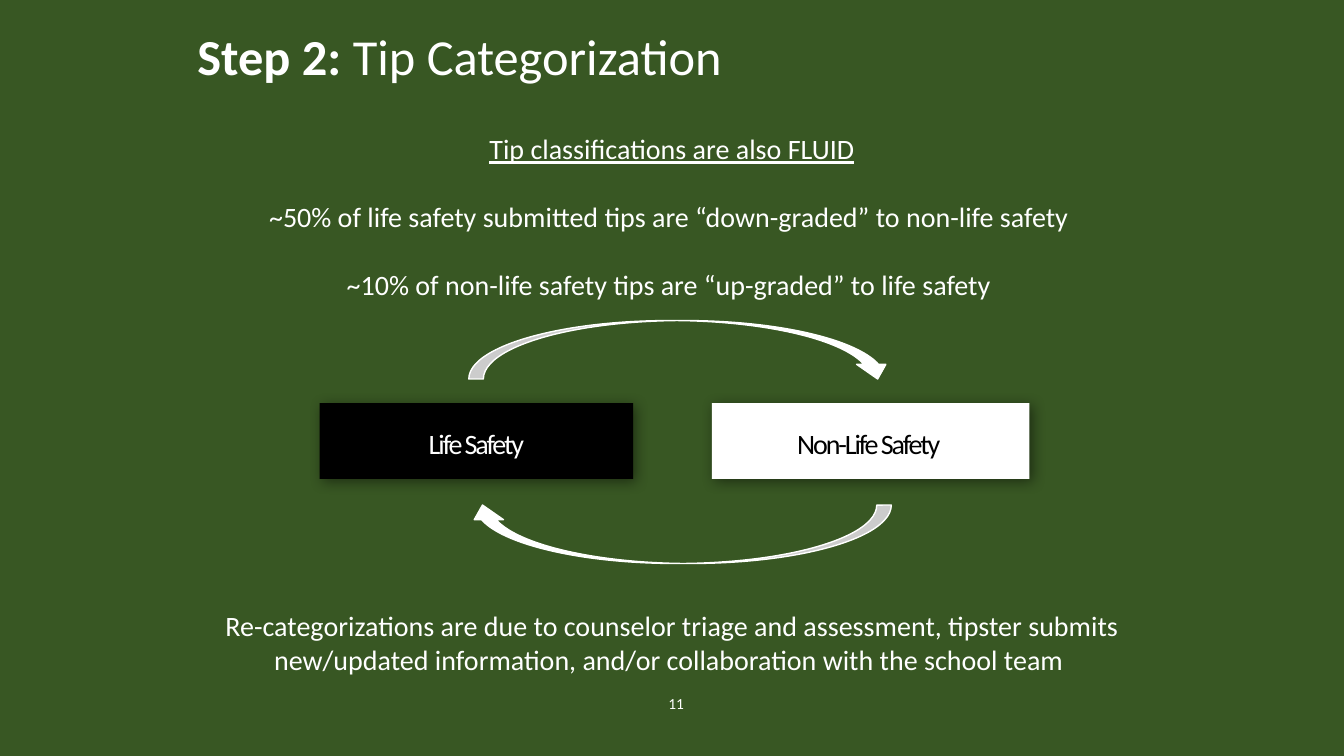
from lxml import etree
from pptx import Presentation
from pptx.dml.color import RGBColor
from pptx.enum.shapes import MSO_SHAPE as Shape
from pptx.enum.text import MSO_ANCHOR as Anchor, MSO_AUTO_SIZE as AutoSize, PP_ALIGN as Align
from pptx.oxml.ns import qn
from pptx.util import Emu, Pt

PX = 9144  # EMU per px, 100 px to the inch
FONT = "Calibri"
BODY_SIZE = 20
LINE = 24.4  # height of one body line in points
COLORS = {"green": "385723", "white": "FFFFFF", "black": "000000"}


def color(name):
    return RGBColor.from_string(COLORS[name])


def px(*lengths):
    return [Emu(length * PX) for length in lengths]


def add_box(page, place, anchor=Anchor.TOP, wrap=True):
    frame = page.shapes.add_textbox(*px(*place)).text_frame
    frame.word_wrap = wrap
    frame.auto_size = AutoSize.NONE
    frame.vertical_anchor = anchor
    return frame


def add_run(para, text, size=BODY_SIZE, ink="white", bold=False, underline=False, spacing=None):
    span = para.add_run()
    span.text = text
    font = span.font
    font.name, font.size = FONT, Pt(size)
    font.bold, font.underline = bold, underline
    font.color.rgb = color(ink)
    if spacing is not None:
        font._element.set("spc", str(round(spacing * 100)))


def add_shape(page, kind, place, fill):
    shape = page.shapes.add_shape(kind, *px(*place))
    shape.shadow.inherit = False
    shape.fill.solid()
    shape.fill.fore_color.rgb = color(fill)
    shape.line.fill.background()
    return shape


def add_soft_shadow(shape):
    effects = shape._element.spPr.find(qn("a:effectLst"))
    shadow = etree.SubElement(effects, qn("a:outerShdw"), blurRad=str(Pt(10)),
                              dist=str(Pt(2.83)), dir="2700000", rotWithShape="0")
    ink = etree.SubElement(shadow, qn("a:srgbClr"), val=COLORS["black"])
    etree.SubElement(ink, qn("a:alpha"), val="45000")


def add_category(page, text, left, width, fill, ink):
    add_soft_shadow(add_shape(page, Shape.RECTANGLE, (left, 400, width, 75), fill))
    para = add_box(page, (left, 423, 311, 38), Anchor.BOTTOM).paragraphs[0]
    para.alignment = Align.CENTER
    para.line_spacing = 0.8
    add_run(para, text, ink=ink, spacing=-1.5)


def add_arrow(page, left, top, rotation):
    arrow = add_shape(page, Shape.CURVED_DOWN_ARROW, (left, top, 420, 58), "white")
    arrow.line.color.rgb = color("white")
    arrow.line.width = Pt(1)
    arrow.rotation = rotation


def add_body(page, place, lines):
    frame = add_box(page, place)
    for index, (text, lines_before, underline) in enumerate(lines):
        para = frame.add_paragraph() if index else frame.paragraphs[0]
        para.alignment = Align.CENTER
        para.space_before = Pt(lines_before * LINE)
        add_run(para, text, underline=underline)


def main():
    deck = Presentation()
    deck.slide_width, deck.slide_height = px(1333, 750)
    page = deck.slides.add_slide(deck.slide_layouts[6])
    page.background.fill.solid()
    page.background.fill.fore_color.rgb = color("green")

    # Title and page number
    title = add_box(page, (186, 16, 975, 86), Anchor.MIDDLE).paragraphs[0]
    title.line_spacing = 0.9
    add_run(title, "Step 2: ", 36, bold=True)
    add_run(title, "Tip Categorization", 36)
    number = add_box(page, (653, 684, 36, 29), wrap=False).paragraphs[0]
    add_run(number, "11", 11)

    # The two categories
    add_category(page, "Non-Life Safety", 706, 315, "white", "black")
    add_category(page, "Life Safety", 317, 311, "black", "white")

    # Statements above and below the cycle: text, lines of space before, underline
    add_body(page, (200, 126, 933, 549), [
        ("Tip classifications are also FLUID", 0, True),
        ("~50% of life safety submitted tips are “down-graded” to non-life safety ", 1, False),
        ("~10% of non-life safety tips are “up-graded” to life safety ", 1, False),
        ("Re-categorizations are due to counselor triage and assessment, tipster submits "
         "new/updated information, and/or collaboration with the school team ", 9, False),
    ])

    # Arrows of the cycle
    add_arrow(page, 465, 318, 0)
    add_arrow(page, 464, 501, 180)

    deck.save("out.pptx")


if __name__ == "__main__":
    main()
